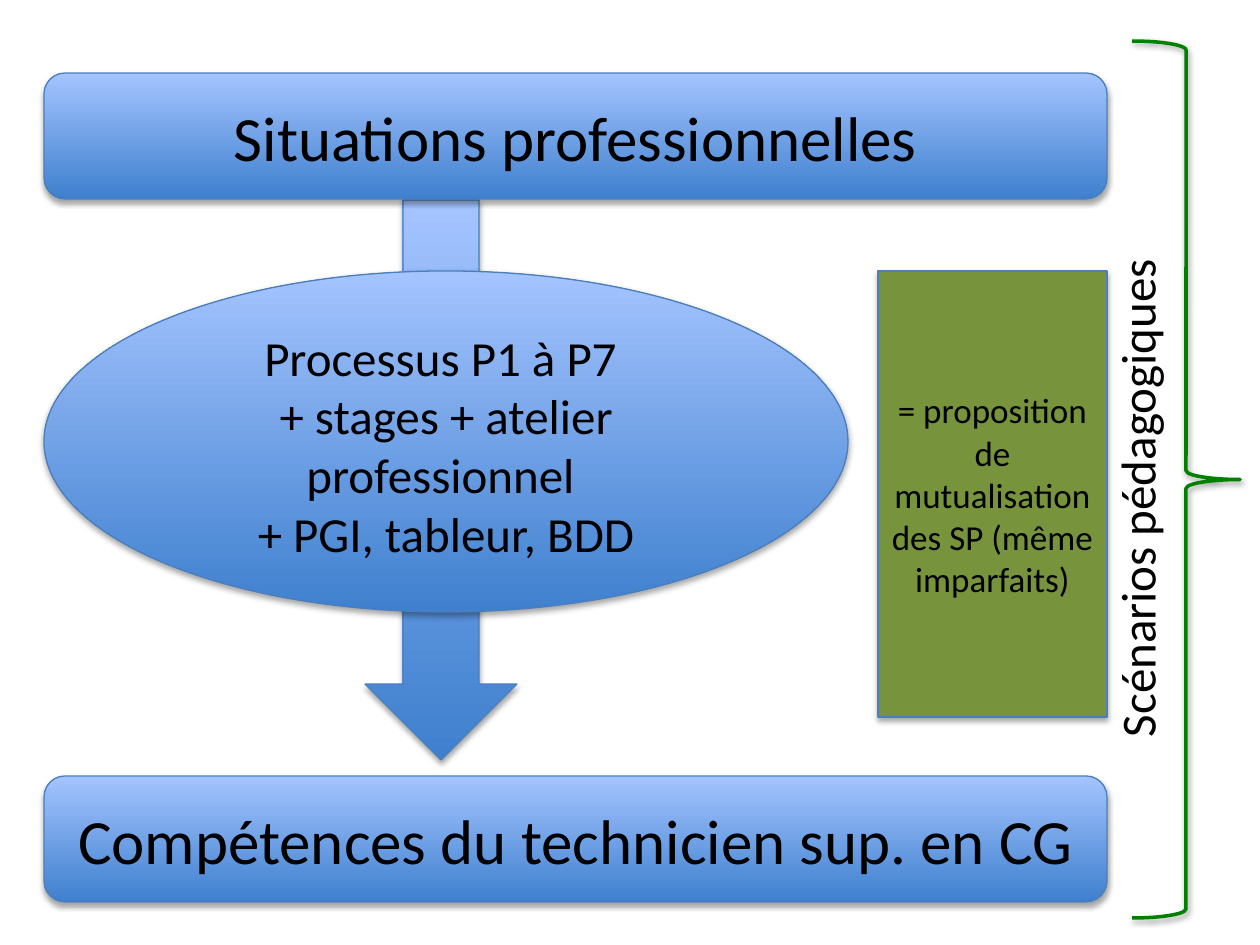
import pptx
import pptx.util
import pptx.dml.color
import pptx.enum.shapes
import pptx.enum.text
import pptx.oxml
import pptx.oxml.ns

PX = 914400 / 126
KIND = pptx.enum.shapes.MSO_SHAPE
ANCHOR = pptx.enum.text.MSO_ANCHOR
ALIGN = pptx.enum.text.PP_ALIGN
BLUE = ("3F80CE", "A4C4FF")
EDGE = "4B7EBC"
LEFT, WIDE, TALL = 44, 1063, 126


def px(*nums):
    return [pptx.util.Emu(round(n * PX)) for n in nums]


def tint(code):
    return pptx.dml.color.RGBColor.from_string(code)


def shade(shape, alpha, dist):
    shape.shadow.inherit = False
    old = shape._element.spPr.find(pptx.oxml.ns.qn("a:effectLst"))
    old.append(pptx.oxml.parse_xml(
        f'<a:outerShdw {pptx.oxml.ns.nsdecls("a")} blurRad="40000" dist="{dist}" '
        'dir="5400000" rotWithShape="0"><a:srgbClr val="000000">'
        f'<a:alpha val="{alpha * 1000}"/></a:srgbClr></a:outerShdw>'))


def paint(shape, fill):
    if fill is None:
        shape.fill.background()
    elif isinstance(fill, str):
        shape.fill.solid()
        shape.fill.fore_color.rgb = tint(fill)
    else:
        shape.fill.gradient()
        shape.fill.gradient_angle = 90
        for stop, code in zip(shape.fill.gradient_stops, fill):
            stop.color.rgb = tint(code)


def write(frame, lines, size, align):
    frame.text = "\n".join(lines)
    for para in frame.paragraphs:
        para.alignment = align
        para.font.size = pptx.util.Pt(size)
        para.font.name = "Calibri"
        para.font.color.rgb = tint("000000")


def draw(slide, kind, box, fill=BLUE, edge=EDGE, width=0.75, alpha=35, dist=23000):
    shape = slide.shapes.add_shape(kind, *px(*box))
    paint(shape, fill)
    shape.line.color.rgb = tint(edge)
    shape.line.width = pptx.util.Pt(width)
    shade(shape, alpha, dist)
    return shape


def panel(slide, kind, box, lines, size, fill=BLUE, anchor=ANCHOR.MIDDLE):
    frame = draw(slide, kind, box, fill).text_frame
    frame.vertical_anchor = anchor
    write(frame, lines, size, ALIGN.CENTER)


def label(slide, box, line, size):
    text = slide.shapes.add_textbox(*px(*box))
    text.rotation = 270
    text.text_frame.word_wrap = False
    text.text_frame.auto_size = pptx.enum.text.MSO_AUTO_SIZE.SHAPE_TO_FIT_TEXT
    write(text.text_frame, [line], size, ALIGN.LEFT)


def main():
    deck = pptx.Presentation()
    deck.slide_width, deck.slide_height = px(1260, 945)
    slide = deck.slides.add_slide(deck.slide_layouts[6])
    draw(slide, KIND.DOWN_ARROW, (365, 200, 152, 560))
    for top, line in ((776, "Compétences du technicien sup. en CG"),
                      (73, "Situations professionnelles")):
        panel(slide, KIND.ROUNDED_RECTANGLE, (LEFT, top, WIDE, TALL), [line], 36)
    panel(slide, KIND.OVAL, (LEFT, 271, 804, 341),
          ["Processus P1 à P7 ", "+ stages + atelier professionnel ",
           "+ PGI, tableur, BDD"], 28, anchor=ANCHOR.TOP)
    draw(slide, KIND.RIGHT_BRACE, (1132, 41, 108, 877), None, "008000", 2, 38, 20000)
    panel(slide, KIND.RECTANGLE, (878, 271, 229, 446),
          ["= proposition de mutualisation des SP (même imparfaits)"], 20, "77933C")
    label(slide, (882, 459, 509, 72), "Scénarios pédagogiques", 28)
    deck.save("out.pptx")


if __name__ == "__main__":
    main()
